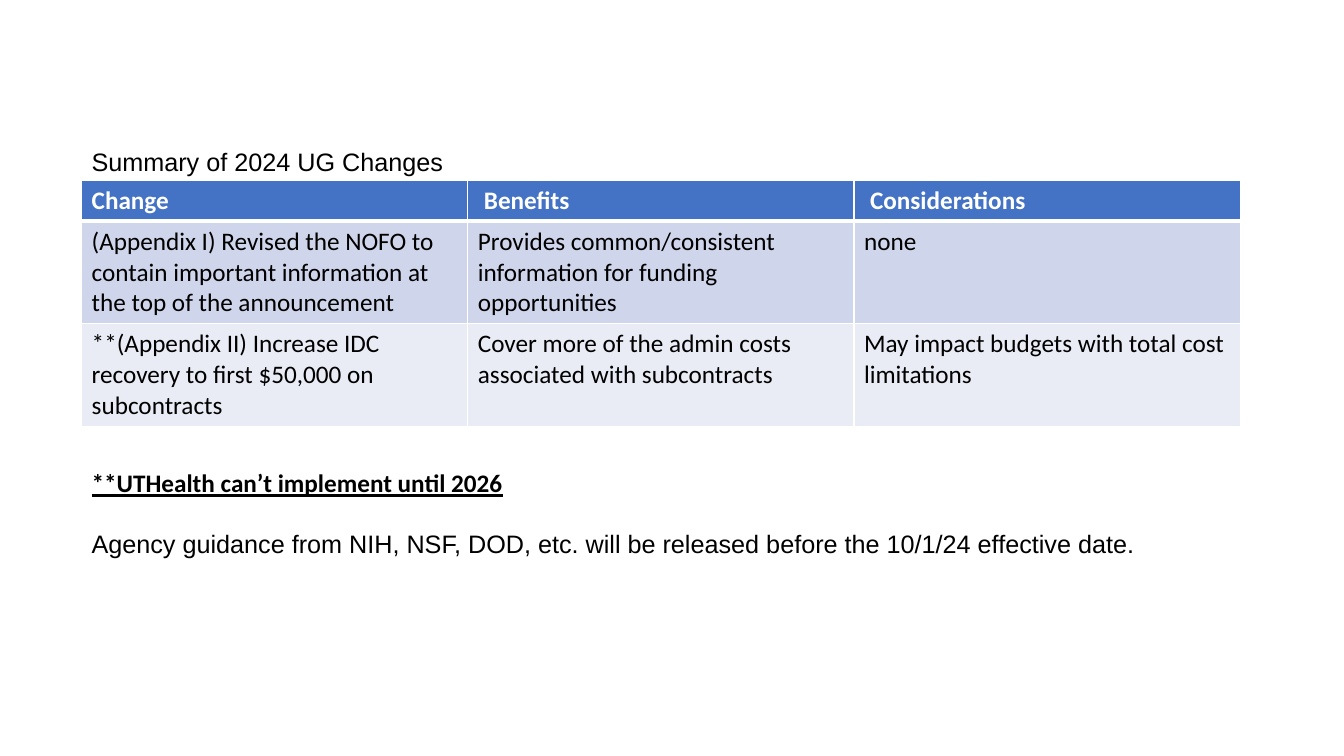
from lxml.etree import SubElement
from pptx import Presentation
from pptx.dml.color import RGBColor
from pptx.enum.text import MSO_AUTO_SIZE
from pptx.oxml.ns import qn
from pptx.util import Inches, Pt

TITLE = "Summary of 2024 UG Changes"
CHANGES = [
    ("Change", "Benefits", "Considerations"),
    ("(Appendix I) Revised the NOFO to contain important information at the top of the announcement",
     "Provides common/consistent information for funding opportunities",
     "none"),
    ("**(Appendix II) Increase IDC recovery to first $50,000 on subcontracts",
     "Cover more of the admin costs associated with subcontracts",
     "May impact budgets with total cost limitations"),
]
DEADLINE = "**UTHealth can’t implement until 2026"
GUIDANCE = "Agency guidance from NIH, NSF, DOD, etc. will be released before the 10/1/24 effective date."

COLORS = {"header": "4472C4", "odd": "CFD5EA", "even": "E9EBF5",
          "white": "FFFFFF", "black": "000000"}
LEFT, TEXT_WIDTH = 0.81, 11.2
TABLE_TOP, COLUMN_WIDTH = 1.79, 3.83
ROW_HEIGHTS = (0.4, 1.01, 1.01)
HEADER_INDENT = 0.16


def style(para, font_name, color="black", bold=False, underline=False):
    for span in para.runs:
        font = span.font
        font.name, font.size = font_name, Pt(18)
        font.bold, font.underline = bold, underline
        font.color.rgb = RGBColor.from_string(COLORS[color])


def add_text(page, top, height, lines):
    box = page.shapes.add_textbox(Inches(LEFT), Inches(top), Inches(TEXT_WIDTH), Inches(height))
    frame = box.text_frame
    frame.word_wrap = True
    frame.auto_size = MSO_AUTO_SIZE.SHAPE_TO_FIT_TEXT
    frame.text = "\n".join(lines)
    return frame.paragraphs


def set_borders(cell, bottom_width):
    properties = cell._tc.get_or_add_tcPr()
    widths = {"a:lnL": 1, "a:lnR": 1, "a:lnT": 1, "a:lnB": bottom_width}
    for position, (side, width) in enumerate(widths.items()):
        line = SubElement(properties, qn(side), w=str(Pt(width)))
        fill = SubElement(line, qn("a:solidFill"))
        SubElement(fill, qn("a:srgbClr"), val=COLORS["white"])
        properties.insert(position, line)  # borders precede the cell fill


deck = Presentation()
deck.slide_width, deck.slide_height = Inches(13.33), Inches(7.5)
page = deck.slides.add_slide(deck.slide_layouts[6])

# Table of changes
columns = len(CHANGES[0])
table = page.shapes.add_table(
    len(CHANGES), columns, Inches(LEFT), Inches(TABLE_TOP),
    Inches(columns * COLUMN_WIDTH), Inches(sum(ROW_HEIGHTS))).table
for column in table.columns:
    column.width = Inches(COLUMN_WIDTH)
for r, (row, height) in enumerate(zip(CHANGES, ROW_HEIGHTS)):
    table.rows[r].height = Inches(height)
    header = r == 0
    band = "header" if header else ("odd" if r % 2 else "even")
    for c, text in enumerate(row):
        cell = table.cell(r, c)
        cell.text = text
        cell.fill.solid()
        cell.fill.fore_color.rgb = RGBColor.from_string(COLORS[band])
        set_borders(cell, 3 if header else 1)
        if header and c:
            cell.margin_left = Inches(HEADER_INDENT)
        style(cell.text_frame.paragraphs[0], "Calibri", "white" if header else "black", bold=header)

# Title above the table
title, = add_text(page, 1.4, 0.4, [TITLE])
style(title, "Arial")

# Notes below the table
deadline, guidance = add_text(page, 4.59, 1.01, [DEADLINE, GUIDANCE])
style(deadline, "Calibri", bold=True, underline=True)
style(guidance, "Arial")
guidance.space_before = Pt(22)

deck.save("out.pptx")
